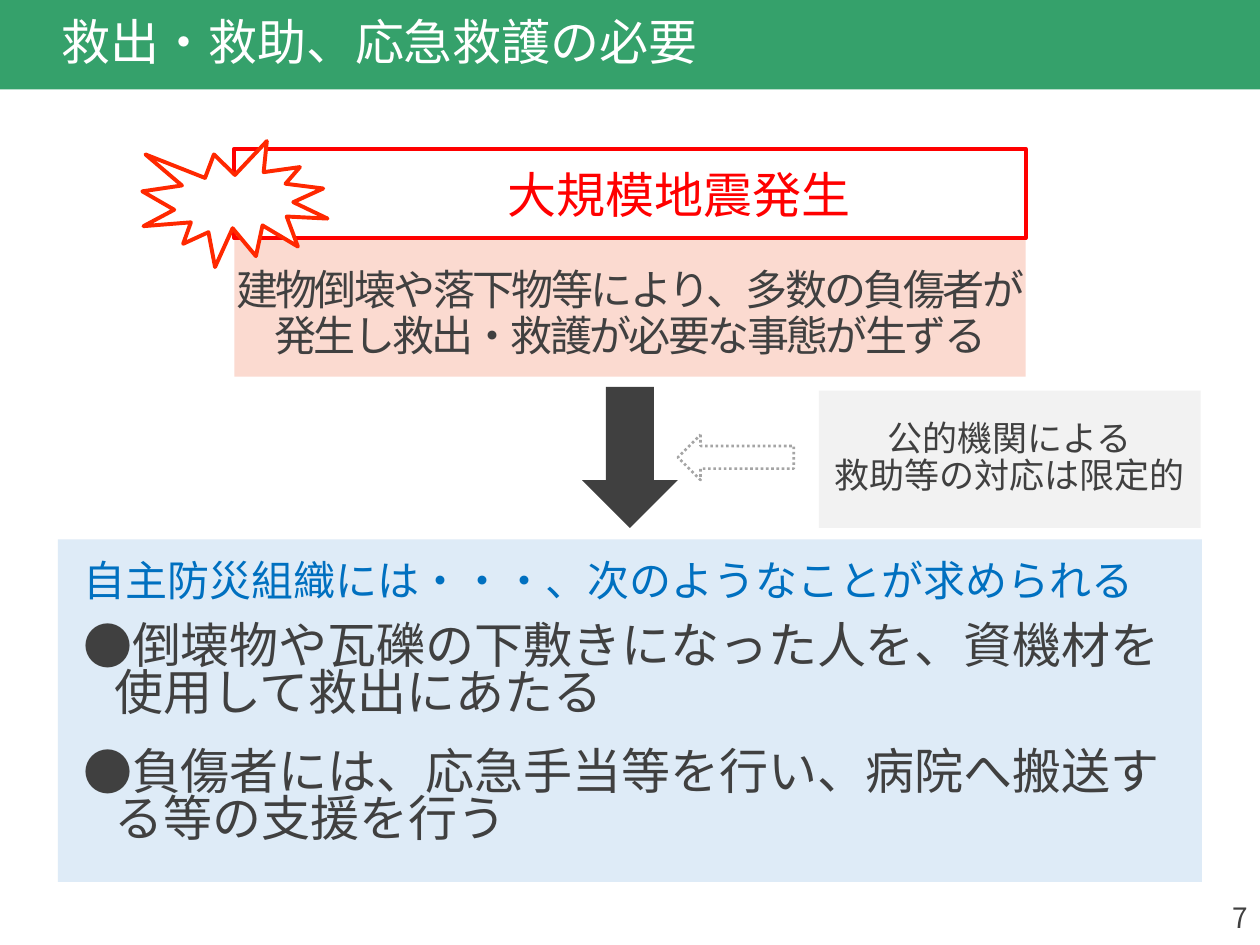
from lxml import etree
from pptx import Presentation
from pptx.dml.color import RGBColor
from pptx.enum import dml, shapes, text
from pptx.oxml import ns
from pptx.util import Inches, Pt

HEX = {
    "green": "35A16B", "white": "FFFFFF", "dark": "404040", "pink": "FBDAD0",
    "red": "FF0000", "burst": "FF2800", "sky": "DEEBF7", "blue": "0070C0",
    "gray": "A5A5A5", "pale": "F2F2F2",
}
SANS = "Noto Sans CJK JP"
KIND = shapes.MSO_SHAPE
ALIGN = text.PP_ALIGN
ANCHOR = text.MSO_ANCHOR


def color(name):
    return RGBColor.from_string(HEX[name])


def child(parent, tag, **attrs):
    return etree.SubElement(parent, ns.qn(tag), attrs)


def place(shape, box):
    shape.left, shape.top, shape.width, shape.height = map(Inches, box)


def setup(frame, anchor=ANCHOR.TOP, inset=(0.1, 0.05, 0.1, 0.05), wrap=True):
    frame.auto_size = text.MSO_AUTO_SIZE.NONE
    frame.word_wrap = wrap
    frame.vertical_anchor = anchor
    (frame.margin_left, frame.margin_top,
     frame.margin_right, frame.margin_bottom) = map(Inches, inset)


def write(frame, words, size=28, ink="dark", font=SANS, align=ALIGN.LEFT,
          line=1.0, before=0, after=0, track=None, bullet=None):
    """Fill the empty first paragraph, or add another one."""
    para = frame.paragraphs[0]
    if para.runs:
        para = frame.add_paragraph()
    para.text = words
    para.alignment, para.line_spacing = align, line
    para.space_before, para.space_after = Pt(before), Pt(after)
    for run in para.runs:
        run.font.size = Pt(size)
        run.font.name = font
        run.font.color.rgb = color(ink)
        props = run.font._element
        child(props, "a:ea", typeface=font)
        if track is not None:
            props.set("spc", str(int(track * 100)))
    if bullet:
        props = para._p.get_or_add_pPr()
        props.set("marL", str(Inches(0.25)))
        props.set("indent", str(-Inches(0.25)))
        child(props, "a:buFont", typeface=font)
        child(props, "a:buChar", char=bullet)


def draw(slide, kind, box, fill=None, edge=None, width=2.25, dash=None):
    shape = slide.shapes.add_shape(kind, *map(Inches, box))
    shape.shadow.inherit = False
    if fill:
        shape.fill.solid()
        shape.fill.fore_color.rgb = color(fill)
    else:
        shape.fill.background()
    if edge:
        shape.line.color.rgb = color(edge)
        shape.line.width = Pt(width)
        if dash:
            shape.line.dash_style = dash
    else:
        shape.line.fill.background()
    return shape


def header(slide, box):
    title = slide.shapes.title
    place(title, box)
    title.fill.solid()
    title.fill.fore_color.rgb = color("green")
    setup(title.text_frame, ANCHOR.MIDDLE)
    write(title.text_frame, "　救出・救助、応急救護の必要", ink="white", line=0.9)


def number(slide, box):
    frame = slide.shapes.add_textbox(*map(Inches, box)).text_frame
    setup(frame)
    write(frame, "7", size=16, align=ALIGN.RIGHT)


def note(slide, box, words, fill, wrap=True, **form):
    frame = draw(slide, KIND.RECTANGLE, box, fill).text_frame
    setup(frame, inset=(0.1, 0.24, 0.1, 0.05), wrap=wrap)
    write(frame, words, align=ALIGN.CENTER, line=0.9, before=10, **form)


def quake(slide, box):
    """Framed heading with a burst on its left, over the damage it causes."""
    x, y, w, h = box
    head = 0.71
    note(slide, (x, y + head + 0.01, w, h - head - 0.01),
         "建物倒壊や落下物等により、多数の負傷者が\n発生し救出・救護が必要な事態が生ずる",
         "pink", wrap=False, size=24, font="Roboto", track=-1.5)
    frame = draw(slide, KIND.RECTANGLE, (x, y, w, head), edge="red").text_frame
    setup(frame, ANCHOR.MIDDLE)
    write(frame, "　　大規模地震発生", ink="red", align=ALIGN.CENTER)
    draw(slide, KIND.EXPLOSION1, (x - 0.73, y - 0.06, 1.47, 1), "white", "burst")


def link(slide, box):
    """Down arrow, joined from the right by the limits of public help."""
    x, y, w, h = box
    draw(slide, KIND.DOWN_ARROW, (x, y, 0.76, h - 0.01), "dark")
    side = draw(slide, KIND.DOWN_ARROW, (x + 1.04, y + 0.1, 0.36, 0.92),
                "white", "gray", 1.5, dml.MSO_LINE.ROUND_DOT)
    side.rotation = 90
    wide = 3.03
    note(slide, (x + w - wide, y + 0.03, wide, 1.09),
         "公的機関による\n救助等の対応は限定的", "pale", size=20)


def duties(slide, box):
    frame = draw(slide, KIND.RECTANGLE, box, "sky").text_frame
    setup(frame, inset=(0.2,) * 4)
    write(frame, "自主防災組織には・・・、次のようなことが求められる",
          size=24, ink="blue", line=0.8, before=10)
    for words in ("倒壊物や瓦礫の下敷きになった人を、資機材を\n使用して救出にあたる",
                  "負傷者には、応急手当等を行い、病院へ搬送する等の支援を行う"):
        write(frame, words, line=0.8, before=12, after=6, bullet="●")


def main():
    deck = Presentation()
    deck.slide_width, deck.slide_height = Inches(10), Inches(7.5)
    slide = deck.slides.add_slide(deck.slide_layouts[5])
    header(slide, (0, 0, 10, 0.71))
    number(slide, (7.75, 7.1, 2.25, 0.4))
    quake(slide, (1.86, 1.18, 6.28, 1.81))
    link(slide, (4.62, 3.07, 4.91, 1.13))
    duties(slide, (0.46, 4.28, 9.08, 2.72))
    deck.save("out.pptx")


if __name__ == "__main__":
    main()
